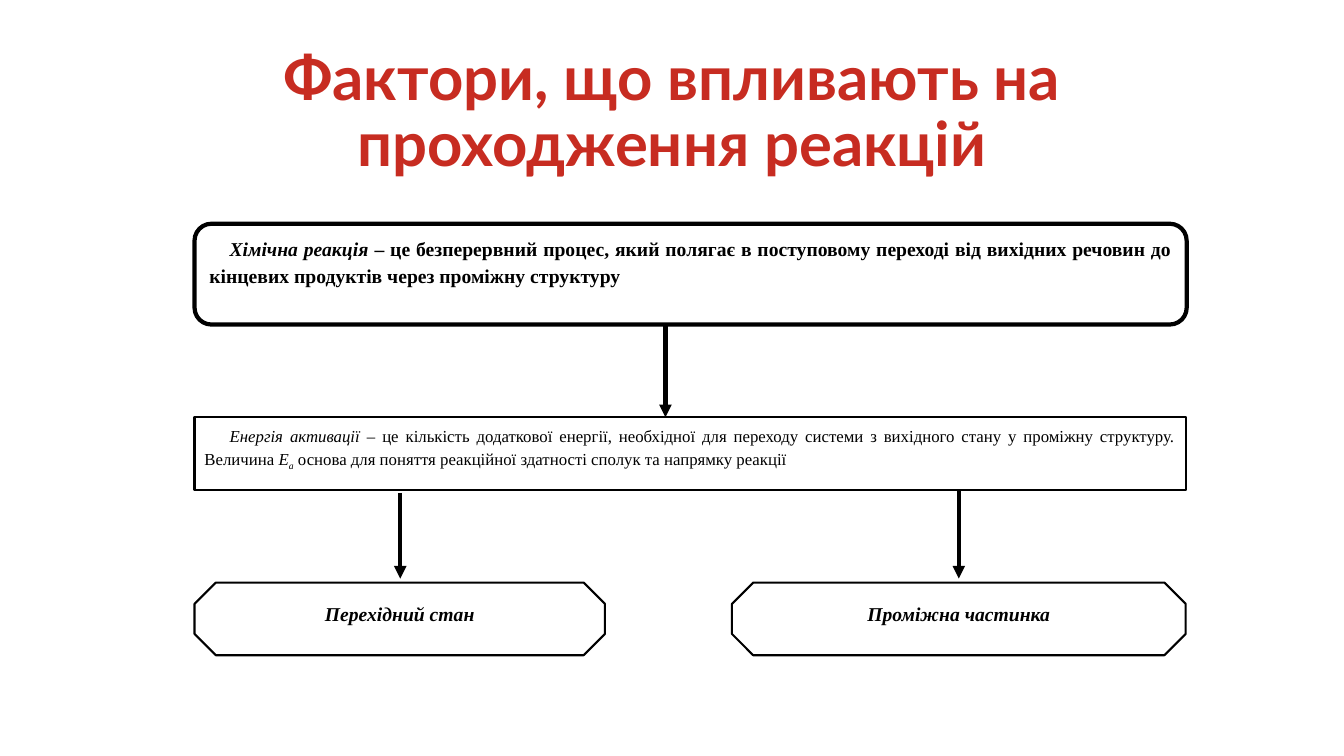
from dataclasses import dataclass

from lxml.etree import SubElement
from pptx import Presentation
from pptx.dml.color import RGBColor
from pptx.enum.shapes import MSO_CONNECTOR, MSO_SHAPE
from pptx.enum.text import MSO_ANCHOR, MSO_AUTO_SIZE, PP_ALIGN
from pptx.oxml.ns import qn
from pptx.util import Pt

PX = 9144  # EMU in one px, 100 px to the inch


@dataclass(frozen=True)
class Theme:
    ink: RGBColor = RGBColor(0x00, 0x00, 0x00)
    paper: RGBColor = RGBColor(0xFF, 0xFF, 0xFF)
    accent: RGBColor = RGBColor(0xC7, 0x2C, 0x21)
    title_font: str = "Lato"
    body_font: str = "Times New Roman"
    title_size: int = 44
    lead_size: int = 14
    note_size: int = 12
    thin: float = 1.5
    thick: float = 3


THEME = Theme()


def apply(target, values):
    for name, value in values.items():
        setattr(target, name, value)


def place(box, left, top, width, height):
    apply(box, {"left": left * PX, "top": top * PX,
                "width": width * PX, "height": height * PX})


def add_title(page, text):
    box = page.shapes.title
    place(box, 92, 40, 1150, 145)
    apply(box.text_frame, {"auto_size": MSO_AUTO_SIZE.NONE, "word_wrap": True,
                           "vertical_anchor": MSO_ANCHOR.MIDDLE})
    para = box.text_frame.paragraphs[0]
    apply(para, {"alignment": PP_ALIGN.CENTER, "line_spacing": 0.9})
    span = para.add_run()
    span.text = text
    apply(span.font, {"name": THEME.title_font, "size": Pt(THEME.title_size),
                      "bold": True})
    span.font.color.rgb = THEME.accent


def add_spans(para, spans, size, bold):
    """Each span is (text, italic, baseline in thousandths of a percent)."""
    for text, italic, baseline in spans:
        span = para.add_run()
        span.text = text
        apply(span.font, {"name": THEME.body_font, "size": Pt(size),
                          "bold": bold, "italic": italic})
        span.font.color.rgb = THEME.ink
        if baseline:
            span._r.get_or_add_rPr().set("baseline", str(baseline))


def add_block(page, kind, bounds, spans, size=THEME.lead_size, bold=True,
              line=THEME.thin, alignment=PP_ALIGN.CENTER, indent=0, corner=None):
    box = page.shapes.add_shape(kind, *(length * PX for length in bounds))
    box.shadow.inherit = False
    box.fill.solid()
    box.fill.fore_color.rgb = THEME.paper
    box.line.color.rgb = THEME.ink
    box.line.width = Pt(line)
    if corner is not None:
        box.adjustments[0] = corner
    apply(box.text_frame, {"word_wrap": True, "vertical_anchor": MSO_ANCHOR.TOP})
    para = box.text_frame.paragraphs[0]
    apply(para, {"alignment": alignment, "line_spacing": 1.15,
                 "space_after": Pt(10)})
    if indent:
        para._p.get_or_add_pPr().set("indent", str(indent * PX))
    add_spans(para, spans, size, bold)


def add_down_arrow(page, x, top, bottom):
    arrow = page.shapes.add_connector(MSO_CONNECTOR.STRAIGHT, x * PX, top * PX,
                                      x * PX, bottom * PX)
    arrow.line.color.rgb = THEME.ink
    arrow.line.width = Pt(THEME.thick)
    SubElement(arrow.line._get_or_add_ln(), qn("a:tailEnd"), type="triangle")
    SubElement(arrow._element.spPr, qn("a:effectLst"))


def main():
    deck = Presentation()
    apply(deck, {"slide_width": 1333 * PX, "slide_height": 750 * PX})
    page = deck.slides.add_slide(deck.slide_layouts[5])
    add_title(page, "Фактори, що впливають на проходження реакцій")

    # Definitions
    add_block(page, MSO_SHAPE.RECTANGLE, (193, 414, 983, 72), [
        ("Енергія активації", True, 0),
        (" – це кількість додаткової енергії, необхідної для переходу системи "
         "з вихідного стану у проміжну структуру. Величина ", False, 0),
        ("Е", True, 0),
        ("а", True, -25000),
        (" основа для поняття реакційної здатності сполук та напрямку реакції",
         False, 0),
    ], size=THEME.note_size, bold=False, alignment=PP_ALIGN.JUSTIFY, indent=25)
    add_block(page, MSO_SHAPE.ROUNDED_RECTANGLE, (193, 222, 984, 100), [
        ("Хімічна реакція", True, 0),
        (" – це безперервний процес, який полягає в поступовому переході від "
         "вихідних речовин до кінцевих продуктів через проміжну структуру",
         False, 0),
    ], line=THEME.thick, alignment=PP_ALIGN.JUSTIFY, indent=20, corner=0.167)
    add_down_arrow(page, 660, 322, 414)

    # Outcomes, each with the arrow that leads to its middle
    for text, left, width, arrow_top in (("Перехідний стан", 193, 407, 489),
                                         ("Проміжна частинка", 726, 450, 486)):
        add_block(page, MSO_SHAPE.OCTAGON, (left, 578, width, 72),
                  [(text, True, 0)], corner=0.293)
        add_down_arrow(page, left + round(width / 2), arrow_top, 574)

    deck.save("out.pptx")


if __name__ == "__main__":
    main()
